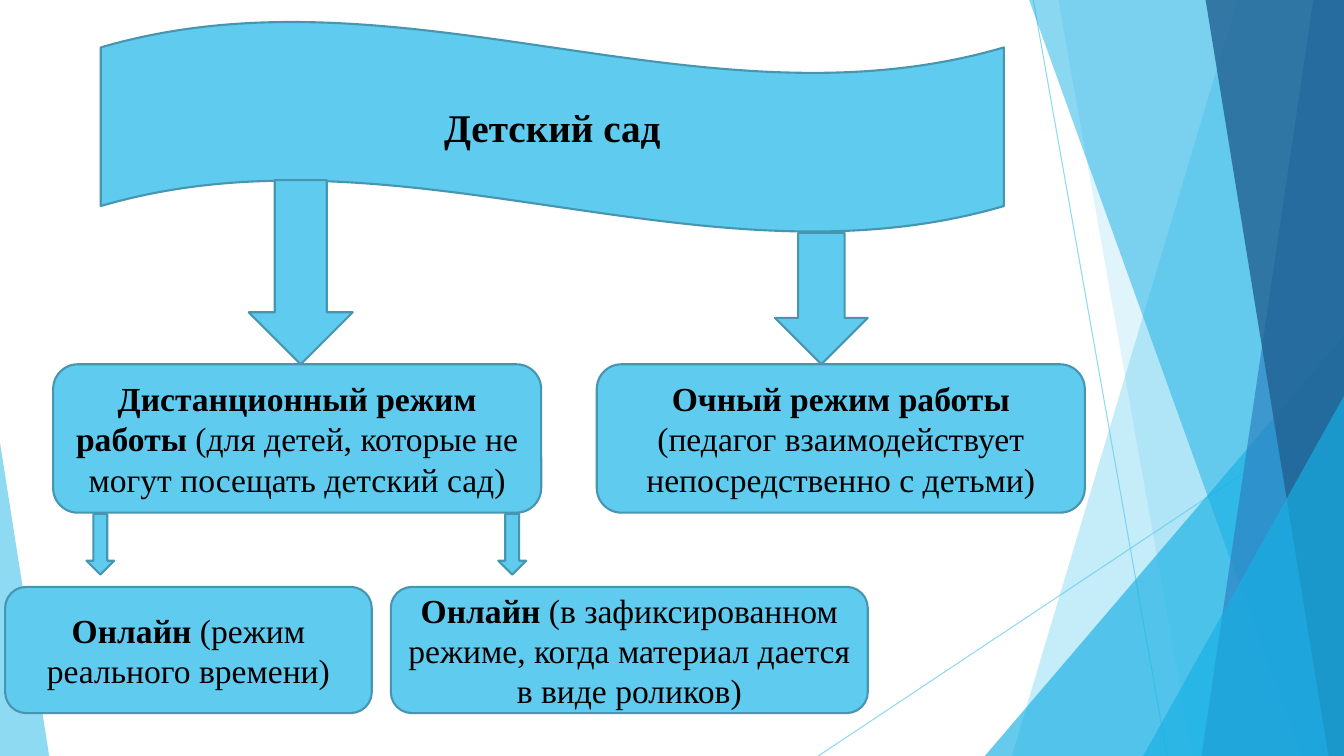
from dataclasses import dataclass

from lxml import etree
from pptx import Presentation
from pptx.dml.color import RGBColor
from pptx.enum.shapes import MSO_CONNECTOR, MSO_SHAPE
from pptx.enum.text import MSO_ANCHOR, PP_ALIGN
from pptx.oxml.ns import qn
from pptx.util import Cm, Pt

STRAIGHT = MSO_CONNECTOR.STRAIGHT
TRIANGLE = MSO_SHAPE.ISOSCELES_TRIANGLE
WAVE = MSO_SHAPE.WAVE
DOWN_ARROW = MSO_SHAPE.DOWN_ARROW
ROUNDED = MSO_SHAPE.ROUNDED_RECTANGLE
MIDDLE = MSO_ANCHOR.MIDDLE
CENTER = PP_ALIGN.CENTER

SLIDE_WIDTH, SLIDE_HEIGHT = 33.87, 19.05
PANEL_TOP = -0.02


@dataclass(frozen=True)
class Theme:
    """Colours, font and sizes of the slide."""

    sky: str = "5FCBEF"
    azure: str = "17B0E4"
    blue: str = "2E83C3"
    navy: str = "226292"
    outline: str = "4696B1"
    text: str = "000000"
    font: str = "Times New Roman"
    title_size: int = 28
    body_size: int = 24
    outline_width: float = 1.5
    ray_width: float = 0.75


THEME = Theme()


def set_opacity(drawn, percent):
    """Make every colour of a drawn element partly transparent."""
    for colour in drawn.element.spPr.iter(qn("a:srgbClr")):
        etree.SubElement(colour, qn("a:alpha")).set("val", str(percent * 1000))


def add_ray(slide, start, end):
    """Draw a thin translucent background line."""
    ray = slide.shapes.add_connector(STRAIGHT, *map(Cm, start + end))
    ray.line.color.rgb = RGBColor.from_string(THEME.sky)
    ray.line.width = Pt(THEME.ray_width)
    set_opacity(ray, 70)
    etree.SubElement(ray.element.spPr, qn("a:effectLst"))


def style_facet(facet, colour, opacity):
    """Give a background facet a translucent fill and no outline."""
    facet.shadow.inherit = False
    facet.fill.solid()
    facet.fill.fore_color.rgb = RGBColor.from_string(colour)
    facet.line.fill.background()
    set_opacity(facet, opacity)


def add_panel(slide, top_x, bottom_x, colour, opacity):
    """Fill from a slanted left edge to the right side of the slide."""
    outline = slide.shapes.build_freeform(Cm(top_x), Cm(PANEL_TOP))
    corners = [(SLIDE_WIDTH, PANEL_TOP), (SLIDE_WIDTH, SLIDE_HEIGHT), (bottom_x, SLIDE_HEIGHT)]
    outline.add_line_segments([(Cm(x), Cm(y)) for x, y in corners])
    style_facet(outline.convert_to_shape(), colour, opacity)


def add_corner(slide, left, top, width, apex, colour, opacity):
    """Place a right triangle standing on the bottom edge."""
    corner = slide.shapes.add_shape(
        TRIANGLE, Cm(left), Cm(top), Cm(width), Cm(SLIDE_HEIGHT - top))
    corner.adjustments[0] = apex
    style_facet(corner, colour, opacity)


def add_block(slide, kind, left, top, width, height):
    """Add an outlined sky-blue block of the diagram."""
    block = slide.shapes.add_shape(kind, *map(Cm, (left, top, width, height)))
    block.shadow.inherit = False
    block.fill.solid()
    block.fill.fore_color.rgb = RGBColor.from_string(THEME.sky)
    block.line.color.rgb = RGBColor.from_string(THEME.outline)
    block.line.width = Pt(THEME.outline_width)
    return block


def write_label(block, heading, detail="", size=THEME.body_size):
    """Write a bold heading followed by an optional plain detail."""
    frame = block.text_frame
    frame.word_wrap = True
    frame.vertical_anchor = MIDDLE
    label = frame.paragraphs[0]
    label.text = heading
    label.alignment = CENTER
    if detail:
        label.add_run().text = detail
    for position, run in enumerate(label.runs):
        run.font.name = THEME.font
        run.font.size = Pt(size)
        run.font.bold = position == 0
        run.font.color.rgb = RGBColor.from_string(THEME.text)


def add_backdrop(slide):
    """Draw the faceted background from back to front."""
    add_ray(slide, (26.04, 0), (29.41, SLIDE_HEIGHT))
    add_ray(slide, (SLIDE_WIDTH, 10.24), (20.62, SLIDE_HEIGHT))
    add_panel(slide, 31.19, 25.5, THEME.sky, 36)
    add_panel(slide, 26.67, 30.05, THEME.sky, 20)
    add_corner(slide, 24.82, 8.46, 9.05, 1, THEME.azure, 66)
    add_panel(slide, 25.93, 32.79, THEME.azure, 50)
    add_panel(slide, 33.1, 30.28, THEME.blue, 70)
    add_panel(slide, 30.38, 33.48, THEME.navy, 80)
    add_corner(slide, 28.81, 9.98, 5.06, 1, THEME.azure, 66)
    add_corner(slide, 0, 11.15, 1.24, 0, THEME.sky, 70)


def add_diagram(slide):
    """Draw the kindergarten banner, its work modes and their arrows."""
    banner = add_block(slide, WAVE, 2.54, 0.53, 22.76, 5.33)
    write_label(banner, "Детский сад", size=THEME.title_size)

    arrows = [
        (6.27, 4.54, 2.62, 4.64),
        (19.53, 5.87, 2.34, 3.31),
        (2.18, 12.95, 0.7, 1.53),
        (12.56, 12.95, 0.7, 1.53),
    ]
    for bounds in arrows:
        add_block(slide, DOWN_ARROW, *bounds)

    mode_row, online_row = (9.18, 3.74), (14.79, 3.18)
    modes = [
        (1.34, 12.3, mode_row, "Дистанционный режим работы ",
         "(для детей, которые не могут посещать детский сад)"),
        (15.04, 12.3, mode_row, "Очный режим работы ",
         "(педагог взаимодействует непосредственно с детьми)"),
        (0.13, 9.24, online_row, "Онлайн", " (режим реального времени)"),
        (9.85, 12.02, online_row, "Онлайн ",
         "(в зафиксированном режиме, когда материал дается в виде роликов)"),
    ]
    for left, width, (top, height), heading, detail in modes:
        mode = add_block(slide, ROUNDED, left, top, width, height)
        write_label(mode, heading, detail)


def main():
    """Build and save the slide."""
    deck = Presentation()
    deck.slide_width, deck.slide_height = Cm(SLIDE_WIDTH), Cm(SLIDE_HEIGHT)
    slide = deck.slides.add_slide(deck.slide_layouts[6])
    add_backdrop(slide)
    add_diagram(slide)
    deck.save("out.pptx")


if __name__ == "__main__":
    main()
